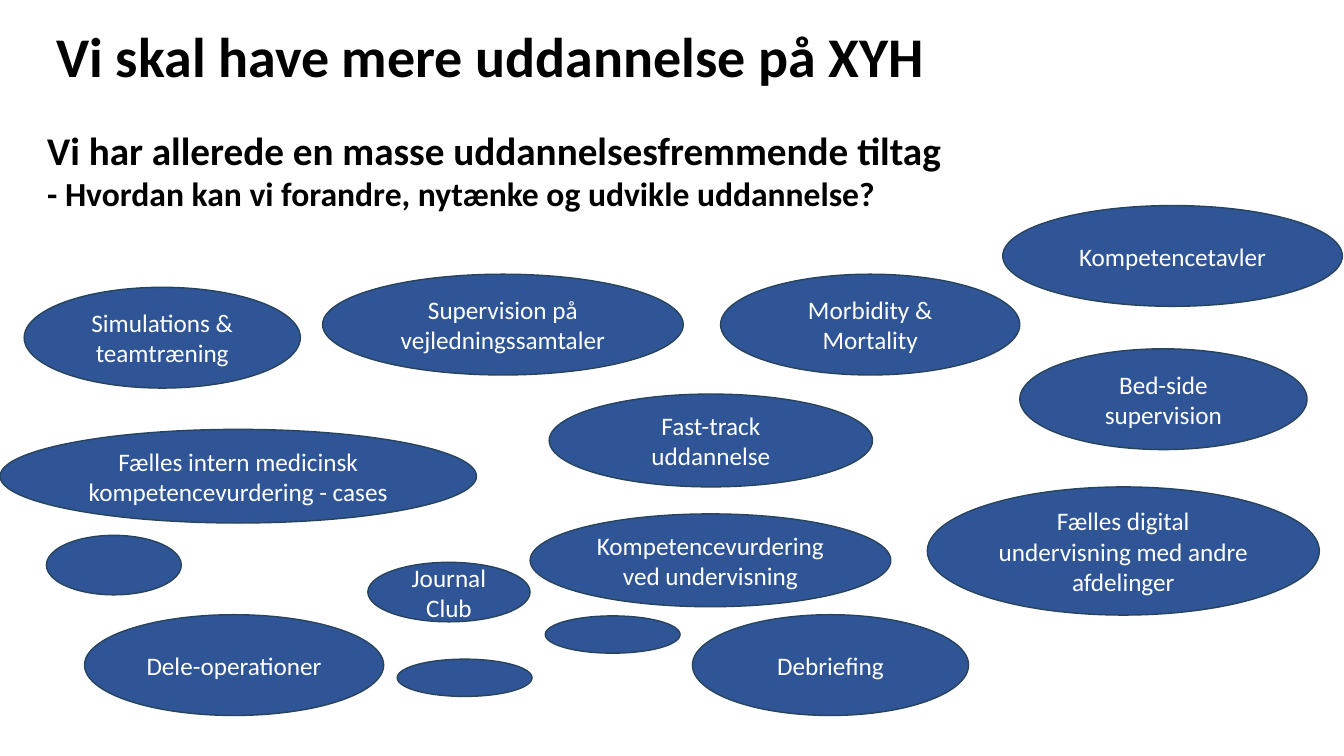
from pptx import Presentation
from pptx.dml.color import RGBColor
from pptx.enum.shapes import MSO_SHAPE
from pptx.enum.text import MSO_ANCHOR, MSO_AUTO_SIZE, PP_ALIGN
from pptx.util import Cm, Pt

TITLE = "Vi skal have mere uddannelse på XYH"
INTRO = [
    ("Vi har allerede en masse uddannelsesfremmende tiltag", 28),
    ("- Hvordan kan vi forandre, nytænke og udvikle uddannelse?", 24),
]
# text, left, top, width, height in cm
INITIATIVES = [
    ("Fælles intern medicinsk kompetencevurdering - cases", 0, 10.82, 12.01, 2.36),
    ("Fast-track uddannelse", 13.84, 9.93, 8.15, 2.34),
    ("Kompetencevurdering ved undervisning", 13.36, 12.95, 9.09, 2.34),
    ("Fælles digital undervisning med andre afdelinger", 23.37, 12.27, 9.88, 3.23),
    ("Kompetencetavler", 25.27, 5.18, 8.56, 2.54),
    ("Bed-side supervision", 25.7, 8.79, 7.24, 2.54),
    ("Dele-operationer", 2.13, 15.49, 7.54, 2.54),
    ("Morbidity & Mortality", 18.16, 6.91, 7.54, 2.54),
    ("Supervision på vejledningssamtaler", 8.13, 6.91, 9.09, 2.54),
    ("Simulations & teamtræning", 0.61, 7.24, 6.96, 2.54),
    ("Debriefing", 17.45, 15.49, 6.96, 2.54),
    ("", 10.01, 16.61, 3.4, 0.94),
    ("", 13.74, 15.52, 3.4, 0.94),
    ("Journal Club", 9.27, 14.17, 4.09, 1.5),
    ("", 1.17, 13.49, 3.4, 1.5),
]


def color(hex_string):
    return RGBColor.from_string(hex_string)


def style(paragraph, size, hex_string, bold=False, align=PP_ALIGN.LEFT):
    paragraph.alignment = align
    font = paragraph.font
    font.name = "Calibri"
    font.size = Pt(size)
    font.bold = bold
    font.color.rgb = color(hex_string)


def add_title(slide):
    title = slide.shapes.title
    title.left, title.top, title.width, title.height = Cm(1.17), Cm(0.43), Cm(30.38), Cm(2.13)
    title.text_frame.text = TITLE
    title.text_frame.vertical_anchor = MSO_ANCHOR.MIDDLE
    paragraph = title.text_frame.paragraphs[0]
    paragraph.line_spacing = 0.9
    style(paragraph, 40, "000000", bold=True)


def add_initiative(slide, text, *box):
    ellipse = slide.shapes.add_shape(MSO_SHAPE.OVAL, *map(Cm, box))
    ellipse.shadow.inherit = False
    ellipse.fill.solid()
    ellipse.fill.fore_color.rgb = color("2F5597")
    ellipse.line.color.rgb = color("28445D")
    ellipse.line.width = Pt(1)
    if text:
        frame = ellipse.text_frame
        frame.text = text
        frame.word_wrap = True
        frame.vertical_anchor = MSO_ANCHOR.MIDDLE
        style(frame.paragraphs[0], 18, "FFFFFF", align=PP_ALIGN.CENTER)


def add_intro(slide):
    frame = slide.shapes.add_textbox(Cm(0.94), Cm(3.05), Cm(25.1), Cm(2.49)).text_frame
    frame.word_wrap = True
    frame.auto_size = MSO_AUTO_SIZE.SHAPE_TO_FIT_TEXT
    frame.text = "\n".join(text for text, size in INTRO)
    for paragraph, (text, size) in zip(frame.paragraphs, INTRO):
        style(paragraph, size, "000000", bold=True)


def main():
    presentation = Presentation()
    presentation.slide_width, presentation.slide_height = Cm(33.87), Cm(19.05)
    slide = presentation.slides.add_slide(presentation.slide_layouts[5])
    add_title(slide)
    for initiative in INITIATIVES:
        add_initiative(slide, *initiative)
    add_intro(slide)
    presentation.save("out.pptx")


if __name__ == "__main__":
    main()
